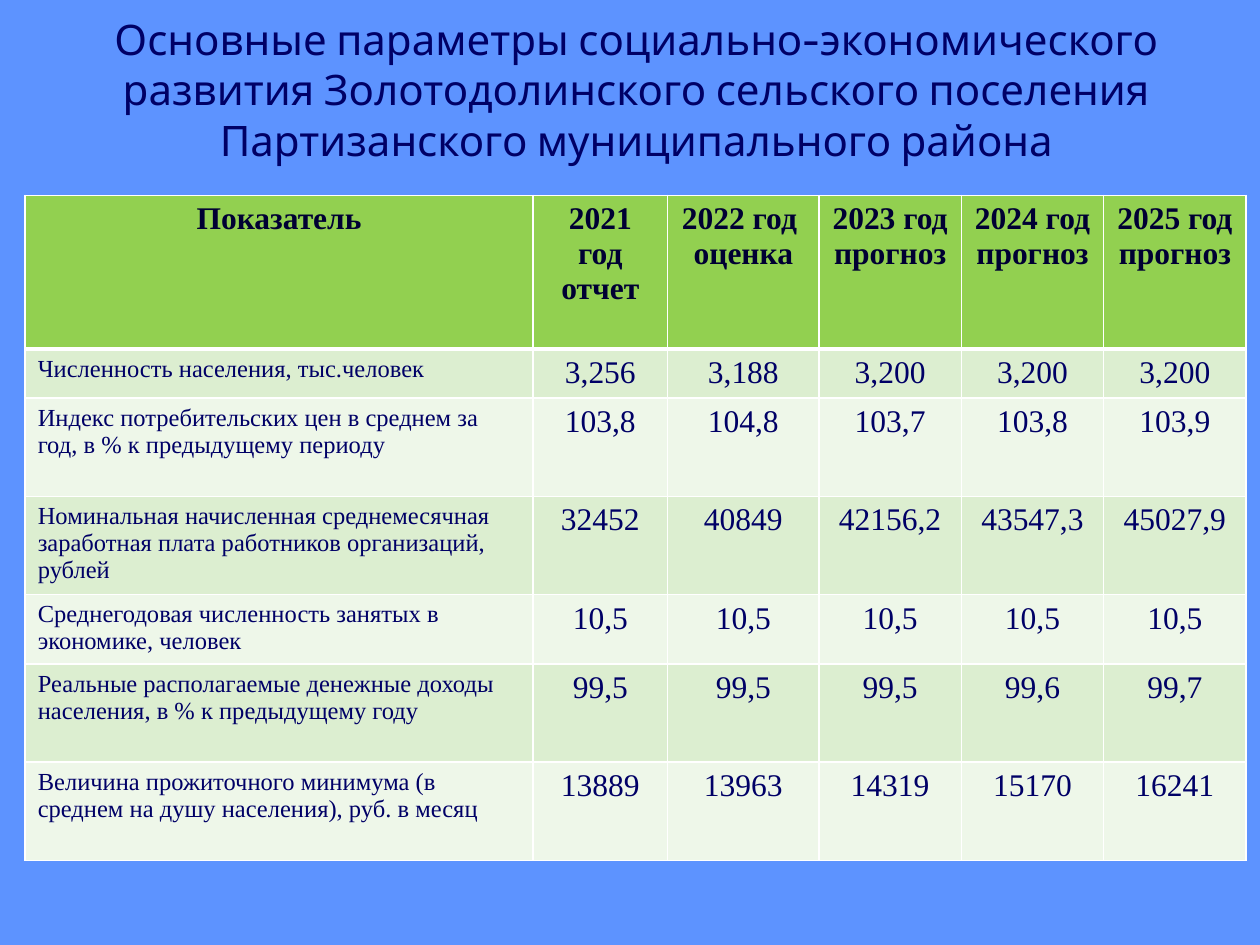
from lxml import etree
from pptx import Presentation
from pptx.dml.color import RGBColor
from pptx.enum.text import MSO_ANCHOR, PP_ALIGN
from pptx.oxml.ns import qn
from pptx.util import Inches, Pt

CENTER, LEFT = PP_ALIGN.CENTER, PP_ALIGN.LEFT
MIDDLE = MSO_ANCHOR.MIDDLE

SKY = RGBColor(0x5D, 0x93, 0xFF)
NAVY = RGBColor(0x00, 0x00, 0x66)
INK = RGBColor(0x00, 0x00, 0x33)
GREEN = RGBColor(0x92, 0xD0, 0x50)
BANDS = (RGBColor(0xDC, 0xEE, 0xD0), RGBColor(0xEE, 0xF7, 0xE9))
WHITE = RGBColor(0xFF, 0xFF, 0xFF)

TITLE = (
    "Основные параметры социально-экономического развития "
    "Золотодолинского сельского поселения Партизанского муниципального района"
)
HEADINGS = (
    "Показатель", "2021 год\nотчет", "2022 год \nоценка",
    "2023 год\nпрогноз", "2024 год прогноз", "2025 год прогноз",
)
INDICATORS = (
    ("Численность населения, тыс.человек",
     "3,256", "3,188", "3,200", "3,200", "3,200"),
    ("Индекс потребительских цен в среднем за год, в % к предыдущему периоду",
     "103,8", "104,8", "103,7", "103,8", "103,9"),
    ("Номинальная начисленная среднемесячная заработная плата работников организаций, рублей",
     "32452", "40849", "42156,2", "43547,3", "45027,9"),
    ("Среднегодовая численность занятых в экономике, человек",
     "10,5", "10,5", "10,5", "10,5", "10,5"),
    ("Реальные располагаемые денежные доходы населения, в % к предыдущему году",
     "99,5", "99,5", "99,5", "99,6", "99,7"),
    ("Величина прожиточного минимума (в среднем на душу населения), руб. в месяц",
     "13889", "13963", "14319", "15170", "16241"),
)
COLUMN_WIDTHS = (4.03, 1.07, 1.2, 1.13, 1.13, 1.13)
ROW_HEIGHTS = (1.22, 0.39, 0.78, 0.78, 0.55, 0.78, 0.78)


class SlideBuilder:
    """Holds the text style and the current slide."""

    title_font = "Cabin"
    table_font = "Times New Roman"

    def __init__(self, slide):
        self.slide = slide

    def background(self, color):
        fill = self.slide.background.fill
        fill.solid()
        fill.fore_color.rgb = color

    def set_text(self, frame, text, font, size, color, align, bold=False):
        frame.text = text
        for paragraph in frame.paragraphs:
            paragraph.alignment = align
            for run in paragraph.runs:
                run.font.name = font
                run.font.size = Pt(size)
                run.font.bold = bold
                run.font.color.rgb = color

    def title(self, text, left, top, width, height):
        heading = self.slide.shapes.title
        heading.left, heading.top = Inches(left), Inches(top)
        heading.width, heading.height = Inches(width), Inches(height)
        heading.text_frame.vertical_anchor = MIDDLE
        self.set_text(heading.text_frame, text, self.title_font, 24, NAVY, CENTER)

    def borders(self, cell, **weights):
        properties = cell._tc.get_or_add_tcPr()
        for position, side in enumerate("LRTB"):
            line = etree.Element(qn(f"a:ln{side}"), w=str(Pt(weights.get(side, 1))))
            solid = etree.SubElement(line, qn("a:solidFill"))
            etree.SubElement(solid, qn("a:srgbClr"), val=str(WHITE))
            properties.insert(position, line)

    def table(self, rows, left, top, widths, heights):
        table = self.slide.shapes.add_table(
            len(rows), len(widths), Inches(left), Inches(top),
            Inches(sum(widths)), Inches(sum(heights))).table
        for column, width in zip(table.columns, widths):
            column.width = Inches(width)
        for row, height in zip(table.rows, heights):
            row.height = Inches(height)
        for r, values in enumerate(rows):
            for c, value in enumerate(values):
                cell = table.cell(r, c)
                header = r == 0
                label = c == 0 and not header
                self.set_text(cell.text_frame, value, self.table_font,
                              14 if label else 18, INK if header else NAVY,
                              LEFT if label else CENTER, bold=header)
                cell.fill.solid()
                cell.fill.fore_color.rgb = GREEN if header else BANDS[(r - 1) % 2]
                self.borders(cell, B=3 if header else 1, T=3 if r == 1 else 1)


def main():
    deck = Presentation()
    deck.slide_width, deck.slide_height = Inches(10), Inches(7.5)
    builder = SlideBuilder(deck.slides.add_slide(deck.slide_layouts[5]))
    builder.background(SKY)
    builder.title(TITLE, 0.55, 0, 9, 1.41)
    builder.table((HEADINGS, *INDICATORS), 0.2, 1.55, COLUMN_WIDTHS, ROW_HEIGHTS)
    deck.save("out.pptx")


if __name__ == "__main__":
    main()
